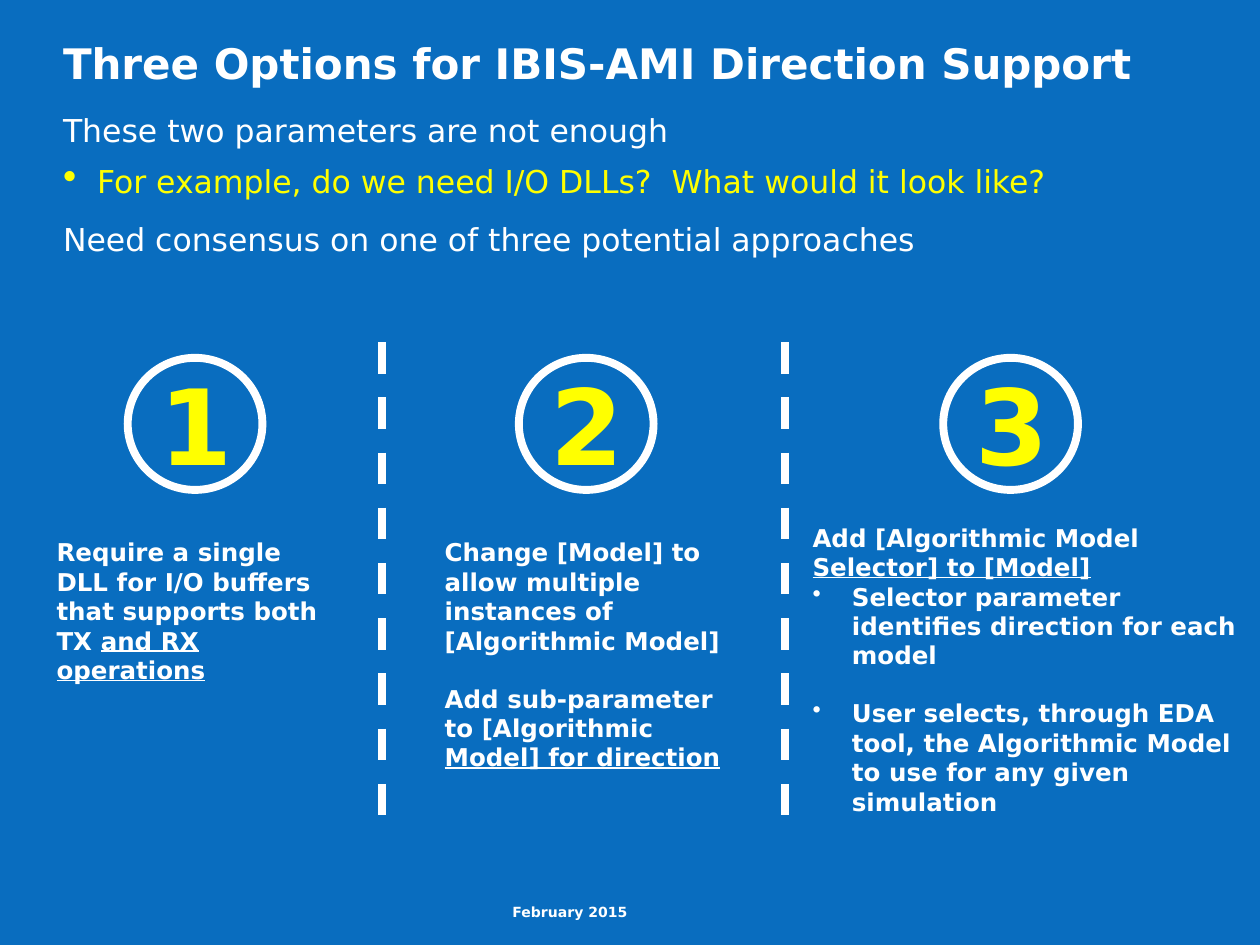
from lxml.etree import SubElement
from pptx import Presentation
from pptx.dml.color import RGBColor
from pptx.enum.dml import MSO_LINE_DASH_STYLE as Dash
from pptx.enum.shapes import MSO_CONNECTOR as Connector, MSO_SHAPE as Shape
from pptx.enum.text import MSO_ANCHOR as Anchor, PP_ALIGN as Align
from pptx.oxml.ns import qn
from pptx.util import Pt

BLUE = RGBColor(0x09, 0x6D, 0xBF)
WHITE = RGBColor(0xFF, 0xFF, 0xFF)
YELLOW = RGBColor(0xFF, 0xFF, 0x00)
FONT = "DejaVu Sans"
STROKE = 4.5
BLANK_LINE = 16.3


def style_paragraph(para, size, color=WHITE, bold=True, align=Align.LEFT):
    para.alignment = align
    para.font.name = FONT
    para.font.size = Pt(size)
    para.font.bold = bold
    para.font.color.rgb = color


def add_bullet(para, indent, percent=100):
    properties = para._p.get_or_add_pPr()
    properties.set("marL", str(Pt(indent)))
    properties.set("indent", str(-Pt(indent)))
    SubElement(properties, qn("a:buSzPct"), val=str(percent * 1000))
    SubElement(properties, qn("a:buChar"), char="•")


def add_frame(slide, left, top, width, height, inset_x=0, inset_y=0):
    box = slide.shapes.add_textbox(Pt(left), Pt(top), Pt(width), Pt(height))
    frame = box.text_frame
    frame.word_wrap = True
    frame.margin_left = frame.margin_right = Pt(inset_x)
    frame.margin_top = frame.margin_bottom = Pt(inset_y)
    return frame


def next_paragraph(frame, index):
    return frame.add_paragraph() if index else frame.paragraphs[0]


def add_label(slide, text, bounds, size, align=Align.LEFT):
    para = add_frame(slide, *bounds).paragraphs[0]
    para.add_run().text = text
    style_paragraph(para, size, align=align)


def add_body(slide, bounds, items):
    frame = add_frame(slide, *bounds)
    for index, (text, gap, color, bulleted) in enumerate(items):
        para = next_paragraph(frame, index)
        para.add_run().text = text
        if bulleted:
            add_bullet(para, 19.44, 125)
        para.space_before = Pt(gap)
        style_paragraph(para, 18, color, bold=False)


def add_option_text(slide, bounds, items):
    frame = add_frame(slide, *bounds, inset_x=7.2, inset_y=3.6)
    for index, (plain, underlined, gap, bulleted) in enumerate(items):
        para = next_paragraph(frame, index)
        para.add_run().text = plain
        if underlined:
            span = para.add_run()
            span.text = underlined
            span.font.underline = True
        if bulleted:
            add_bullet(para, 22.5)
        para.space_before = Pt(gap)
        style_paragraph(para, 14)


def add_number(slide, number, left):
    circle = slide.shapes.add_shape(Shape.OVAL, Pt(left), Pt(204.5), Pt(77), Pt(75.5))
    circle.shadow.inherit = False
    circle.fill.background()
    circle.line.color.rgb = WHITE
    circle.line.width = Pt(STROKE)
    frame = circle.text_frame
    frame.vertical_anchor = Anchor.MIDDLE
    para = frame.paragraphs[0]
    para.add_run().text = str(number)
    style_paragraph(para, 60, YELLOW, align=Align.CENTER)


def add_divider(slide, x):
    divider = slide.shapes.add_connector(
        Connector.STRAIGHT, Pt(x), Pt(195.5), Pt(x), Pt(466.5))
    divider.line.color.rgb = WHITE
    divider.line.width = Pt(STROKE)
    divider.line.dash_style = Dash.DASH
    SubElement(divider._element.spPr, qn("a:effectLst"))


def main():
    deck = Presentation()
    deck.slide_width, deck.slide_height = Pt(720), Pt(540)
    slide = deck.slides.add_slide(deck.slide_layouts[6])
    slide.background.fill.solid()
    slide.background.fill.fore_color.rgb = BLUE

    add_label(slide, "Three Options for IBIS-AMI Direction Support",
              (36, 21.6, 648.7, 69.8), 24)
    add_body(slide, (36, 63.5, 648.7, 386.6), [
        ("These two parameters are not enough", 0, WHITE, False),
        ("For example, do we need I/O DLLs?  What would it look like?", 7.5, YELLOW, True),
        ("Need consensus on one of three potential approaches", 11.5, WHITE, False),
    ])
    add_label(slide, "February 2015", (139.7, 516.2, 372.2, 23.8), 8, Align.CENTER)

    for number, left in enumerate((73, 296.5, 539), start=1):
        add_number(slide, number, left)
    for x in (218.5, 448.5):
        add_divider(slide, x)

    add_option_text(slide, (25.2, 303.5, 176.4, 75), [
        ("Require a single DLL for I/O buffers that supports both TX ",
         "and RX operations", 0, False),
    ])
    add_option_text(slide, (247, 303.5, 176.4, 143.3), [
        ("Change [Model] to allow multiple instances of [Algorithmic Model]",
         "", 0, False),
        ("Add sub-parameter to [Algorithmic ", "Model] for direction",
         BLANK_LINE, False),
    ])
    add_option_text(slide, (457.2, 295.2, 262.8, 177), [
        ("Add [Algorithmic Model ", "Selector] to [Model]", 0, False),
        ("Selector parameter identifies direction for each model", "", 0, True),
        ("User selects, through EDA tool, the Algorithmic Model to use for any "
         "given simulation", "", BLANK_LINE, True),
    ])
    deck.save("out.pptx")


if __name__ == "__main__":
    main()
